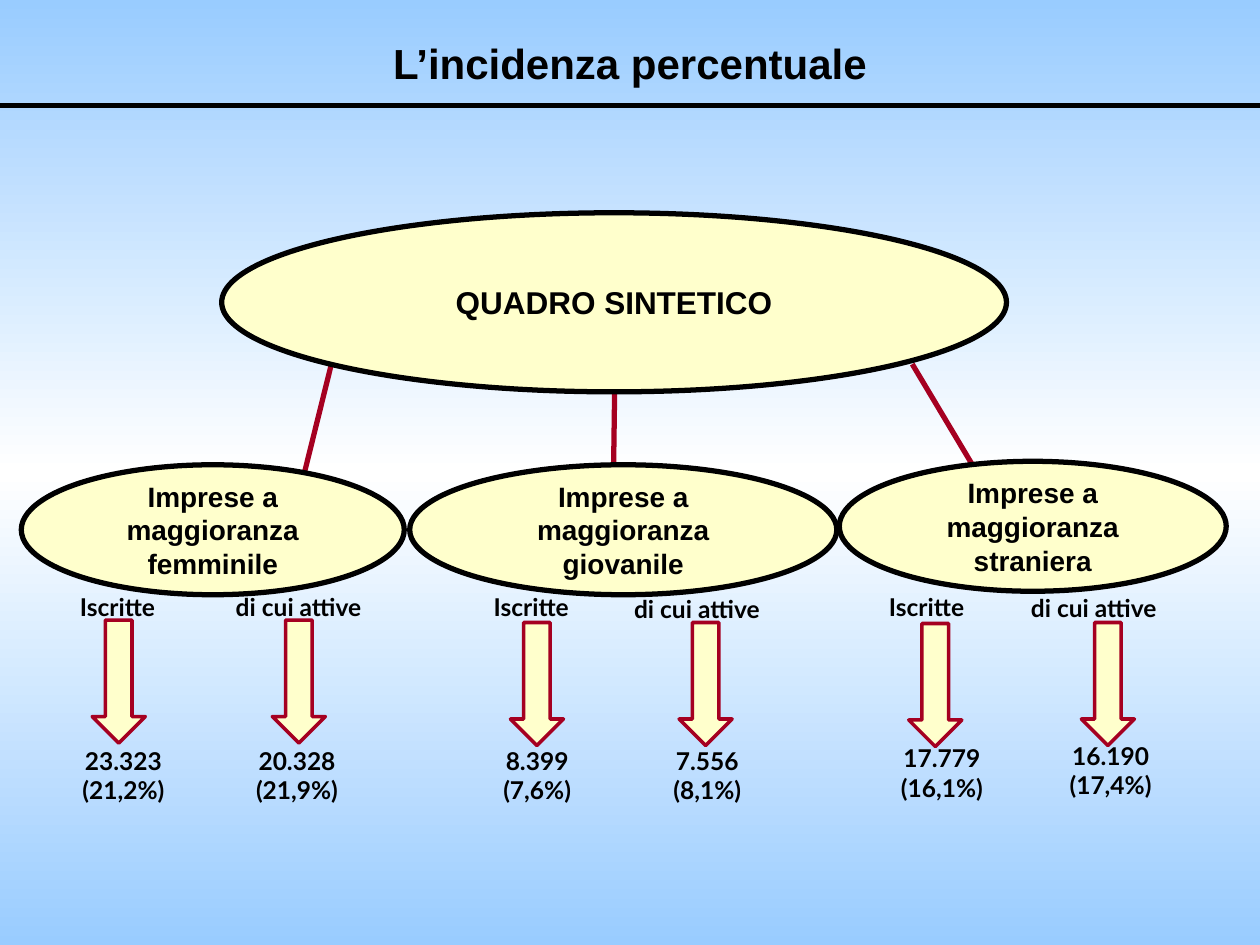
from copy import deepcopy

from lxml import etree
from pptx import Presentation
from pptx.dml.color import RGBColor
from pptx.enum.shapes import MSO_CONNECTOR, MSO_SHAPE
from pptx.enum.text import MSO_ANCHOR, PP_ALIGN
from pptx.oxml.ns import qn
from pptx.util import Cm, Pt

STRAIGHT = MSO_CONNECTOR.STRAIGHT
ELLIPSE, DOWN_ARROW = MSO_SHAPE.OVAL, MSO_SHAPE.DOWN_ARROW
CENTER, MIDDLE, TOP = PP_ALIGN.CENTER, MSO_ANCHOR.MIDDLE, MSO_ANCHOR.TOP
TITLE_ONLY = 5

COLORS = {"sky": "99CCFF", "white": "FFFFFF", "cream": "FFFFCC",
          "red": "A50021", "black": "000000"}
HEADING_FONT, FIGURE_FONT = "Arial", "Lato"
WIDTH, HEIGHT = 25.4, 19.05

# Boxes are left, top, width, height in cm. Each column holds its label and
# figures, then the centres and tops of label, arrow and figures,
# measured from the corner of the group's ellipse.
GROUPS = [
    ("Imprese a maggioranza femminile", (0.43, 9.37, 7.72, 2.62), [
        ("Iscritte", ["23.323", "(21,2%)"], (1.94, 1.96, 2.06), (2.44, 3.13, 5.54)),
        ("di cui attive", ["20.328", "(21,9%)"], (5.59, 5.59, 5.56), (2.44, 3.13, 5.54)),
    ]),
    ("Imprese a maggioranza giovanile", (8.26, 9.37, 8.61, 2.62), [
        ("Iscritte", ["8.399", "(7,6%)"], (2.45, 2.56, 2.57), (2.44, 3.18, 5.54)),
        ("di cui attive", ["7.556", "(8,1%)"], (5.79, 5.96, 6.0), (2.49, 3.18, 5.54)),
    ]),
    ("Imprese a maggioranza straniera", (16.92, 9.3, 7.8, 2.62), [
        ("Iscritte", ["17.779", "(16,1%)"], (1.76, 1.93, 2.07), (2.51, 3.27, 5.56)),
        ("di cui attive", ["16.190", "(17,4%)"], (5.13, 5.41, 5.47), (2.54, 3.25, 5.51)),
    ]),
]
# Ends of the branches, measured from the corner of the summary ellipse.
BRANCHES = [((7.92, 3.61), (7.87, 7.24)),
            ((13.92, 3.05), (16.59, 7.52)),
            ((2.21, 3.05), (1.09, 7.57))]


def color(name):
    return RGBColor.from_string(COLORS[name])


def write(box, lines, size, font, anchor=MIDDLE):
    """Fill a box with centred bold lines, one paragraph each."""
    frame = box.text_frame
    frame.word_wrap = True
    frame.vertical_anchor = anchor
    for index, line in enumerate(lines):
        para = frame.add_paragraph() if index else frame.paragraphs[0]
        para.alignment = CENTER
        para.space_before = Pt(0)
        span = para.add_run()
        span.text = line
        span.font.size = Pt(size)
        span.font.name = font
        span.font.bold = True
        span.font.color.rgb = color("black")


def add_figure(page, kind, box, outline, weight):
    figure = page.shapes.add_shape(kind, *map(Cm, box))
    figure.shadow.inherit = False
    figure.fill.solid()
    figure.fill.fore_color.rgb = color("cream")
    figure.line.color.rgb = color(outline)
    figure.line.width = Pt(weight)
    return figure


def add_ellipse(page, box, text, size):
    write(add_figure(page, ELLIPSE, box, "black", 3), [text], size, HEADING_FONT)


def add_line(page, start, end, name, arrow=False):
    line = page.shapes.add_connector(STRAIGHT, *map(Cm, (*start, *end)))
    line.line.color.rgb = color(name)
    line.line.width = Pt(3)
    if arrow:
        etree.SubElement(line.line._get_or_add_ln(), qn("a:tailEnd"), type="arrow")
    etree.SubElement(line._element.spPr, qn("a:effectLst"))


def add_caption(page, center, top, width, height, lines):
    box = page.shapes.add_textbox(
        *map(Cm, (center - width / 2, top, width, height)))
    write(box, lines, 14, FIGURE_FONT, TOP)


def paint_background(page):
    """Vertical gradient: sky, white in the middle, sky."""
    fill = page.background.fill
    fill.gradient()
    fill.gradient_angle = 270
    stops = page._element.find(".//" + qn("a:gsLst"))
    stops.append(deepcopy(stops[-1]))
    for stop, name, place in zip(fill.gradient_stops, ("sky", "white", "sky"), (0, 0.5, 1)):
        stop.color.rgb = color(name)
        stop.position = place


def add_header(page, left, top, width, height):
    title = page.shapes.title
    title.left, title.top, title.width, title.height = map(
        Cm, (left, top, width, height))
    write(title, ["L’incidenza percentuale"], 24, HEADING_FONT)
    rule = top + height + 0.13
    add_line(page, (left, rule), (left + width, rule), "black")


def add_summary(page, left, top, width, height):
    for start, end in BRANCHES:
        add_line(page, (left + start[0], top + start[1]),
                 (left + end[0], top + end[1]), "red", arrow=True)
    add_ellipse(page, (left, top, width, height), "QUADRO SINTETICO", 18)


def add_group(page, box, name, columns):
    """One kind of firm: its ellipse with two columns of figures below."""
    left, top = box[:2]
    add_ellipse(page, box, name, 16)
    for label, figures, centers, tops in columns:
        label_x, arrow_x, figures_x = (left + center for center in centers)
        label_y, arrow_y, figures_y = (top + offset for offset in tops)
        add_caption(page, label_x, label_y, 3.5, 0.86, [label])
        add_figure(page, DOWN_ARROW, (arrow_x - 0.53, arrow_y, 1.07, 2.48), "red", 2)
        add_caption(page, figures_x, figures_y, 3.07, 1.45, figures)


def main():
    deck = Presentation()
    deck.slide_width, deck.slide_height = Cm(WIDTH), Cm(HEIGHT)
    page = deck.slides.add_slide(deck.slide_layouts[TITLE_ONLY])
    paint_background(page)
    add_header(page, 0, 0.53, WIDTH, 1.47)
    add_summary(page, 4.47, 4.29, 15.82, 3.61)
    for name, box, columns in GROUPS:
        add_group(page, box, name, columns)
    deck.save("out.pptx")


if __name__ == "__main__":
    main()
